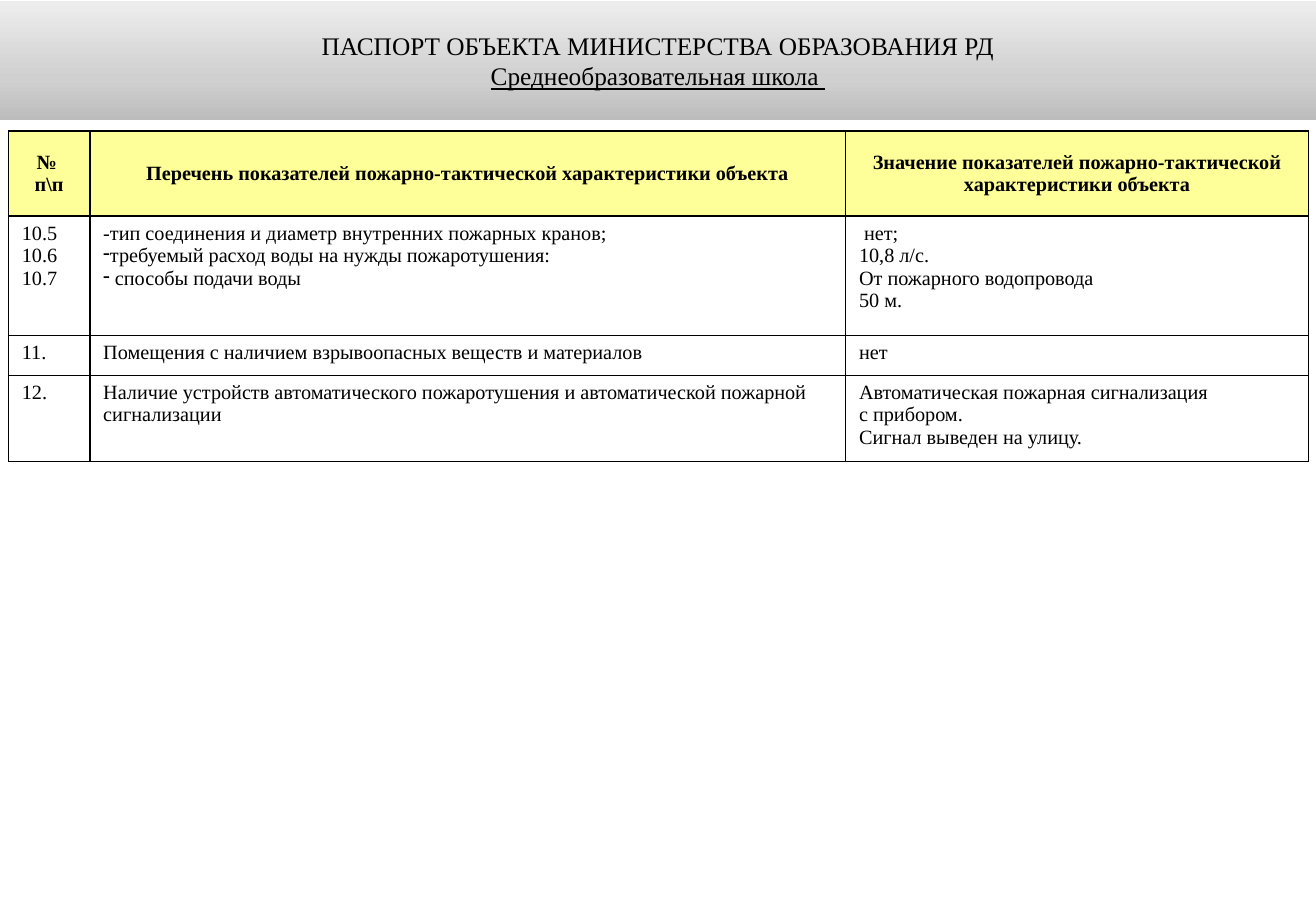
from dataclasses import dataclass

from pptx import Presentation
from pptx.dml.color import RGBColor
from pptx.enum.text import MSO_ANCHOR, MSO_AUTO_SIZE, PP_ALIGN
from pptx.oxml import parse_xml
from pptx.oxml.ns import nsdecls
from pptx.util import Inches, Pt

CENTER, LEFT = PP_ALIGN.CENTER, PP_ALIGN.LEFT
MIDDLE, TOP = MSO_ANCHOR.MIDDLE, MSO_ANCHOR.TOP
NO_AUTOFIT = MSO_AUTO_SIZE.NONE
TITLE_ONLY = 5


@dataclass(frozen=True)
class Theme:
    font: str = "Times New Roman"
    title_size: int = 15
    table_size: int = 12
    ink: str = "000000"
    heading_fill: str = "FFFF99"
    cell_fill: str = "FFFFFF"
    band_stops: tuple = ((0, "BCBCBC"), (35, "D0D0D0"), (100, "EDEDED"))
    border_width: int = 1


THEME = Theme()
SLIDE_SIZE = (10.83, 7.5)
TITLE_BOX = (0, 0.01, 10.83, 0.98)
TABLE_BOX = (0.07, 1.08, 10.7, 2.72)
COLUMN_WIDTHS = (0.67, 6.22, 3.81)
ROW_HEIGHTS = (0.7, 0.98, 0.33, 0.71)
BULLET = "•"

TITLE_LINES = (
    ("ПАСПОРТ ОБЪЕКТА МИНИСТЕРСТВА ОБРАЗОВАНИЯ РД", False),
    ("Среднеобразовательная школа ", True),
)
INDICATORS = (
    (
        ("№ ", "п\\п"),
        ("Перечень показателей пожарно-тактической характеристики объекта",),
        ("Значение показателей пожарно-тактической характеристики объекта",),
    ),
    (
        ("10.5", "10.6", "10.7"),
        (
            "-тип соединения и диаметр внутренних пожарных кранов;",
            BULLET + "требуемый расход воды на нужды пожаротушения:",
            BULLET + " способы подачи воды",
        ),
        (" нет;", "10,8 л/с.", "От пожарного водопровода", "50 м."),
    ),
    (
        ("11.",),
        ("Помещения с наличием взрывоопасных веществ и материалов",),
        ("нет",),
    ),
    (
        ("12.",),
        ("Наличие устройств автоматического пожаротушения и автоматической пожарной сигнализации",),
        ("Автоматическая пожарная сигнализация", "с прибором.", "Сигнал выведен на улицу."),
    ),
)


def add_run(paragraph, text, size, bold=False, underline=False):
    run = paragraph.add_run()
    run.text = text
    run.font.name = THEME.font
    run.font.size = Pt(size)
    run.font.bold = bold
    run.font.underline = underline
    run.font.color.rgb = RGBColor.from_string(THEME.ink)


def next_paragraph(frame, index, alignment):
    paragraph = frame.add_paragraph() if index else frame.paragraphs[0]
    paragraph.alignment = alignment
    return paragraph


def add_dash_bullet(paragraph):
    properties = paragraph._p.get_or_add_pPr()
    properties.set("marL", "0")
    properties.set("indent", "0")
    properties.append(parse_xml(f'<a:buChar {nsdecls("a")} char="-"/>'))


def set_margins(target, horizontal, vertical):
    target.margin_left = target.margin_right = Inches(horizontal)
    target.margin_top = target.margin_bottom = Inches(vertical)


def add_borders(cell):
    properties = cell._tc.get_or_add_tcPr()
    for position, side in enumerate("LRTB"):
        properties.insert(position, parse_xml(
            f'<a:ln{side} {nsdecls("a")} w="{Pt(THEME.border_width)}">'
            f'<a:solidFill><a:srgbClr val="{THEME.ink}"/></a:solidFill></a:ln{side}>'
        ))


def fill_title_band(title, box):
    title.left, title.top, title.width, title.height = map(Inches, box)
    stops = "".join(
        f'<a:gs pos="{percent * 1000}"><a:srgbClr val="{color}"/></a:gs>'
        for percent, color in THEME.band_stops
    )
    title._element.spPr.append(parse_xml(
        f'<a:gradFill {nsdecls("a")} rotWithShape="1"><a:gsLst>{stops}</a:gsLst>'
        '<a:lin ang="16200000" scaled="0"/></a:gradFill>'
    ))
    frame = title.text_frame
    frame.word_wrap = True
    frame.auto_size = NO_AUTOFIT
    frame.vertical_anchor = MIDDLE
    set_margins(frame, 0.09, 0.05)
    for index, (line, underline) in enumerate(TITLE_LINES):
        paragraph = next_paragraph(frame, index, CENTER)
        add_run(paragraph, line, THEME.title_size, underline=underline)


def fill_cell(cell, lines, heading):
    cell.vertical_anchor = MIDDLE if heading else TOP
    set_margins(cell, 0.11, 0.05)
    cell.fill.solid()
    cell.fill.fore_color.rgb = RGBColor.from_string(
        THEME.heading_fill if heading else THEME.cell_fill
    )
    add_borders(cell)
    for index, line in enumerate(lines):
        paragraph = next_paragraph(cell.text_frame, index, CENTER if heading else LEFT)
        if line.startswith(BULLET):
            add_dash_bullet(paragraph)
        add_run(paragraph, line.removeprefix(BULLET), THEME.table_size, bold=heading)


def add_indicator_table(slide, box):
    table = slide.shapes.add_table(
        len(ROW_HEIGHTS), len(COLUMN_WIDTHS), *map(Inches, box)
    ).table
    table.first_row = table.horz_banding = False
    for column, width in zip(table.columns, COLUMN_WIDTHS):
        column.width = Inches(width)
    for row_index, (row, height) in enumerate(zip(table.rows, ROW_HEIGHTS)):
        row.height = Inches(height)
        for cell, lines in zip(row.cells, INDICATORS[row_index]):
            fill_cell(cell, lines, heading=row_index == 0)


def main():
    presentation = Presentation()
    presentation.slide_width, presentation.slide_height = map(Inches, SLIDE_SIZE)
    slide = presentation.slides.add_slide(presentation.slide_layouts[TITLE_ONLY])
    fill_title_band(slide.shapes.title, TITLE_BOX)
    add_indicator_table(slide, TABLE_BOX)
    presentation.save("out.pptx")


if __name__ == "__main__":
    main()
